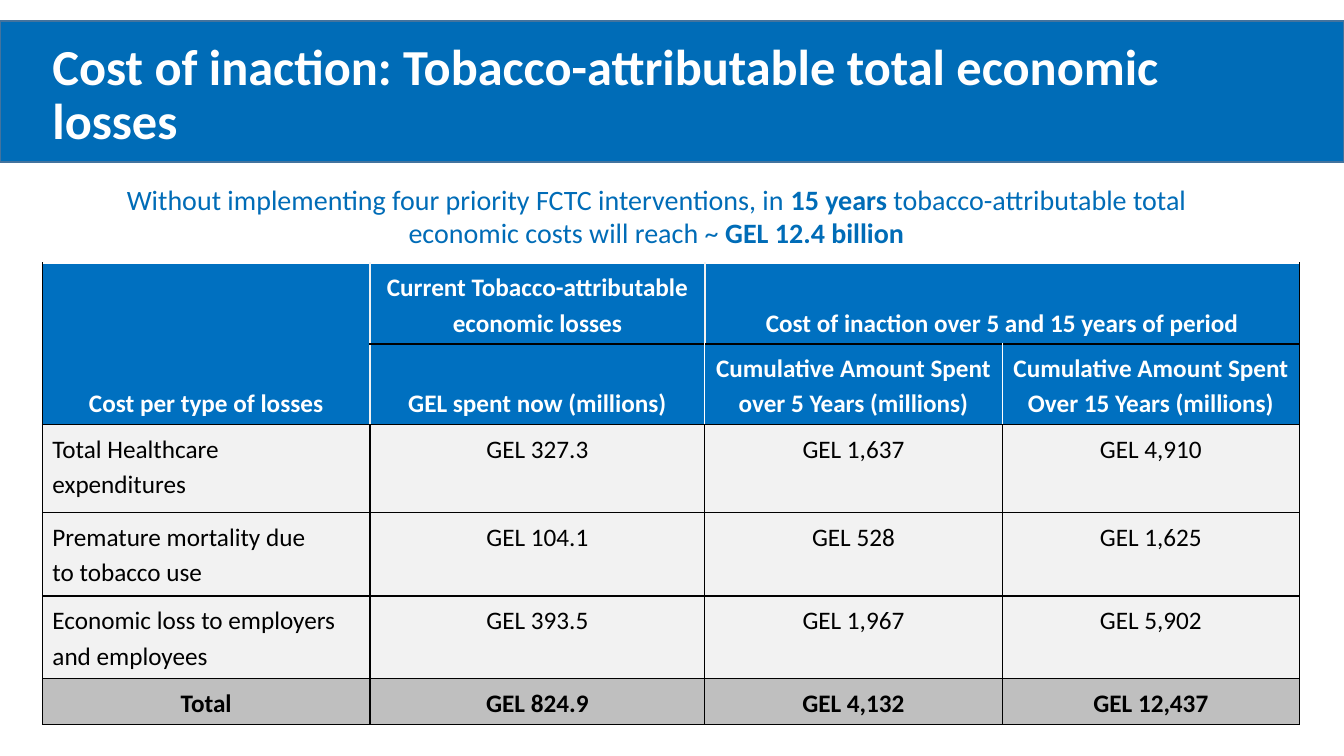
from lxml.etree import SubElement
from pptx import Presentation
from pptx.dml.color import RGBColor
from pptx.enum.shapes import MSO_SHAPE
from pptx.enum.text import MSO_ANCHOR, MSO_AUTO_SIZE, PP_ALIGN
from pptx.oxml.ns import qn
from pptx.util import Inches, Pt

WHITE = RGBColor(0xFF, 0xFF, 0xFF)
BLACK = RGBColor(0, 0, 0)
BAND_BLUE = RGBColor(0x00, 0x6C, 0xB7)
BAND_EDGE = RGBColor(0x43, 0x73, 0x9E)
HEADER_BLUE = RGBColor(0x00, 0x70, 0xC0)
LIGHT_GREY = RGBColor(0xF2, 0xF2, 0xF2)
TOTAL_GREY = RGBColor(0xBF, 0xBF, 0xBF)

FONT = "Calibri"
SLIDE_WIDTH, SLIDE_HEIGHT = 13.33, 7.5
COLUMN_WIDTHS = (3.25, 3.32, 2.95, 2.95)
ROW_HEIGHTS = (0.74, 0.74, 0.87, 0.83, 0.82, 0.43)
HEADER_ROWS = 2

COST_ROWS = (
    ("Cost per type of losses", "Current Tobacco-attributable economic losses",
     "Cost of inaction over 5 and 15 years of period", ""),
    ("", "GEL spent now (millions)", "Cumulative Amount Spent over 5 Years (millions)",
     "Cumulative Amount Spent Over 15 Years (millions)"),
    ("Total Healthcare \nexpenditures", "GEL 327.3", "GEL 1,637", "GEL 4,910"),
    ("Premature mortality due \nto tobacco use", "GEL 104.1", "GEL 528", "GEL 1,625"),
    ("Economic loss to employers and employees", "GEL 393.5", "GEL 1,967", "GEL 5,902"),
    ("Total", "GEL 824.9", "GEL 4,132", "GEL 12,437"),
)


def write(frame, *runs, size=18, color=BLACK, bold=False, align=PP_ALIGN.LEFT, spacing=1.0):
    """Fill one paragraph; a run is a string or a (string, bold) pair."""
    paragraph = frame.paragraphs[0]
    paragraph.alignment = align
    paragraph.line_spacing = spacing
    for item in runs:
        text, run_bold = (item, bold) if isinstance(item, str) else item
        for index, line in enumerate(text.split("\n")):
            if index:
                paragraph.add_line_break()
            run = paragraph.add_run()
            run.text = line
            run.font.name, run.font.size, run.font.bold = FONT, Pt(size), run_bold
            run.font.color.rgb = color


def place(shape, box):
    shape.left, shape.top, shape.width, shape.height = map(Inches, box)


def add_title(slide, box, text):
    left, top, width, height = box
    band = slide.shapes.add_shape(MSO_SHAPE.RECTANGLE, *map(Inches, box))
    band.shadow.inherit = False
    band.fill.solid()
    band.fill.fore_color.rgb = BAND_BLUE
    band.line.color.rgb = BAND_EDGE
    band.line.width = Pt(1)

    title = slide.shapes.title
    title._element.addprevious(band._element)
    place(title, (left + 0.42, top + 0.02, width - 0.98, height + 0.05))
    frame = title.text_frame
    frame.word_wrap = True
    frame.auto_size = MSO_AUTO_SIZE.NONE
    frame.vertical_anchor = MSO_ANCHOR.MIDDLE
    write(frame, text, size=36, color=WHITE, bold=True, spacing=0.9)


def add_message(slide, box, *runs):
    frame = slide.shapes.add_textbox(*map(Inches, box)).text_frame
    frame.word_wrap = True
    write(frame, *runs, size=20, color=BAND_BLUE, align=PP_ALIGN.CENTER)


def set_borders(cell, **edges):
    """Give the edges L, R, T and B a (colour, width in points) each."""
    properties = cell._tc.get_or_add_tcPr()
    for index, (side, (color, width)) in enumerate(edges.items()):
        line = SubElement(properties, qn(f"a:ln{side}"), w=str(Pt(width)))
        fill = SubElement(line, qn("a:solidFill"))
        SubElement(fill, qn("a:srgbClr"), val=str(color))
        properties.insert(index, line)


def format_cell(cell, text, row, column):
    is_header, is_total = row < HEADER_ROWS, row == len(COST_ROWS) - 1
    cell.fill.solid()
    cell.fill.fore_color.rgb = (
        HEADER_BLUE if is_header else TOTAL_GREY if is_total else LIGHT_GREY)
    cell.vertical_anchor = (
        MSO_ANCHOR.BOTTOM if is_header else MSO_ANCHOR.MIDDLE if is_total else MSO_ANCHOR.TOP)

    outer = (BLACK, 1)
    inner = (LIGHT_GREY, 1.5) if row == 0 else (WHITE, 1) if is_header else outer
    last_column = column + (cell.span_width if cell.is_merge_origin else 1)
    set_borders(cell, L=inner if column else outer,
                R=inner if last_column < len(COLUMN_WIDTHS) else outer,
                T=outer if row else (WHITE, 1), B=outer)
    if text:
        is_label = column == 0 and not is_header and not is_total
        write(cell.text_frame, text, color=WHITE if is_header else BLACK,
              bold=is_header or is_total, spacing=1.15,
              align=PP_ALIGN.LEFT if is_label else PP_ALIGN.CENTER)


def add_cost_table(slide, left, top):
    box = (left, top, sum(COLUMN_WIDTHS), sum(ROW_HEIGHTS))
    table = slide.shapes.add_table(
        len(ROW_HEIGHTS), len(COLUMN_WIDTHS), *map(Inches, box)).table
    table.first_row = table.horz_banding = False
    for column, width in zip(table.columns, COLUMN_WIDTHS):
        column.width = Inches(width)
    for row, height in zip(table.rows, ROW_HEIGHTS):
        row.height = Inches(height)
    table.cell(0, 0).merge(table.cell(1, 0))
    table.cell(0, 2).merge(table.cell(0, 3))
    for row, texts in enumerate(COST_ROWS):
        for column, text in enumerate(texts):
            format_cell(table.cell(row, column), text, row, column)


def main():
    presentation = Presentation()
    presentation.slide_width = Inches(SLIDE_WIDTH)
    presentation.slide_height = Inches(SLIDE_HEIGHT)
    slide = presentation.slides.add_slide(presentation.slide_layouts[5])
    add_title(slide, (0, 0.21, SLIDE_WIDTH, 1.4),
              "Cost of inaction: Tobacco-attributable total economic losses")
    add_cost_table(slide, 0.42, 2.61)
    add_message(slide, (0.95, 1.76, 11.12, 0.77),
                "Without implementing four priority FCTC interventions, in ",
                ("15 years ", True),
                "tobacco-attributable total economic costs will reach ~ ",
                ("GEL 12.4 billion", True))
    presentation.save("out.pptx")


if __name__ == "__main__":
    main()
